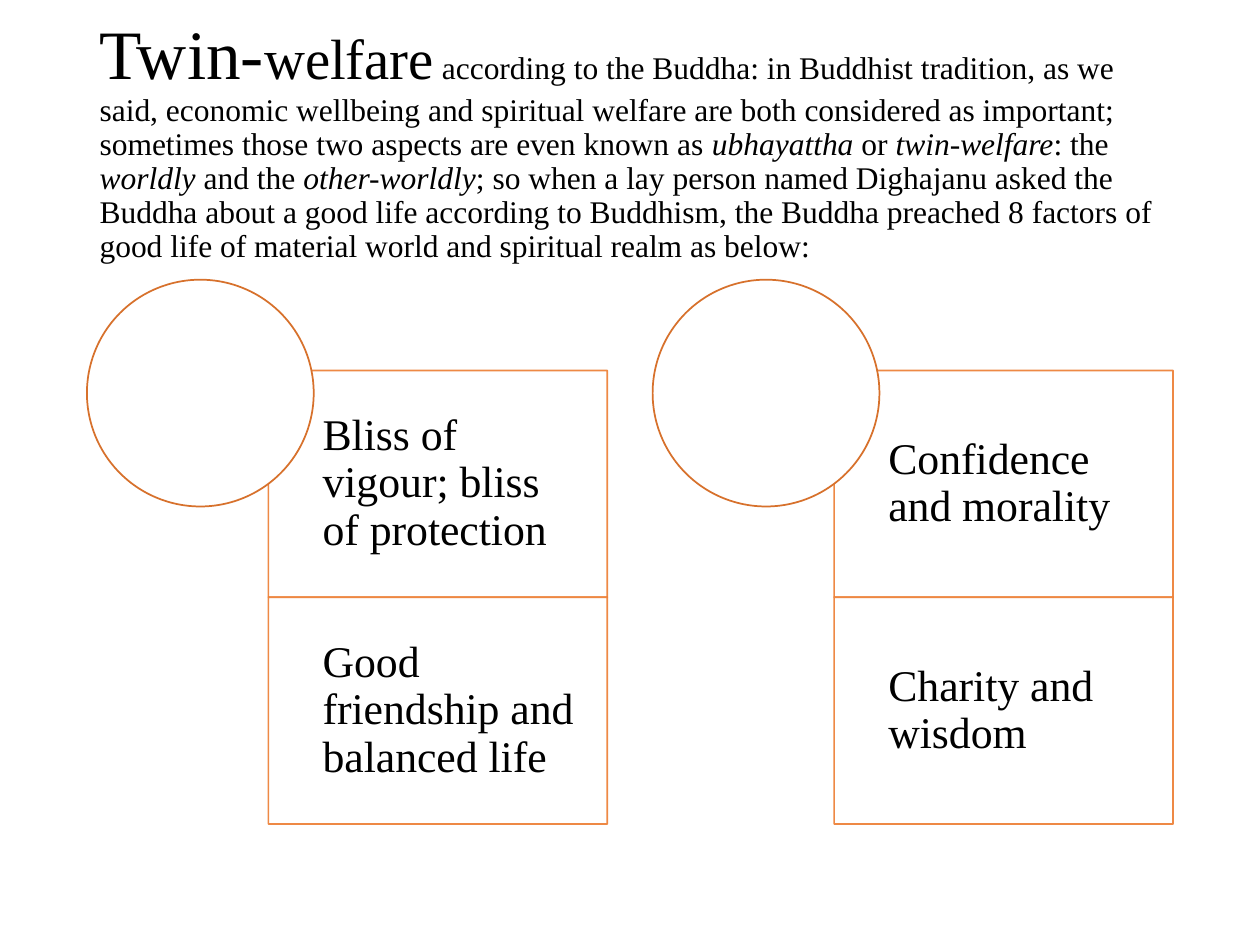
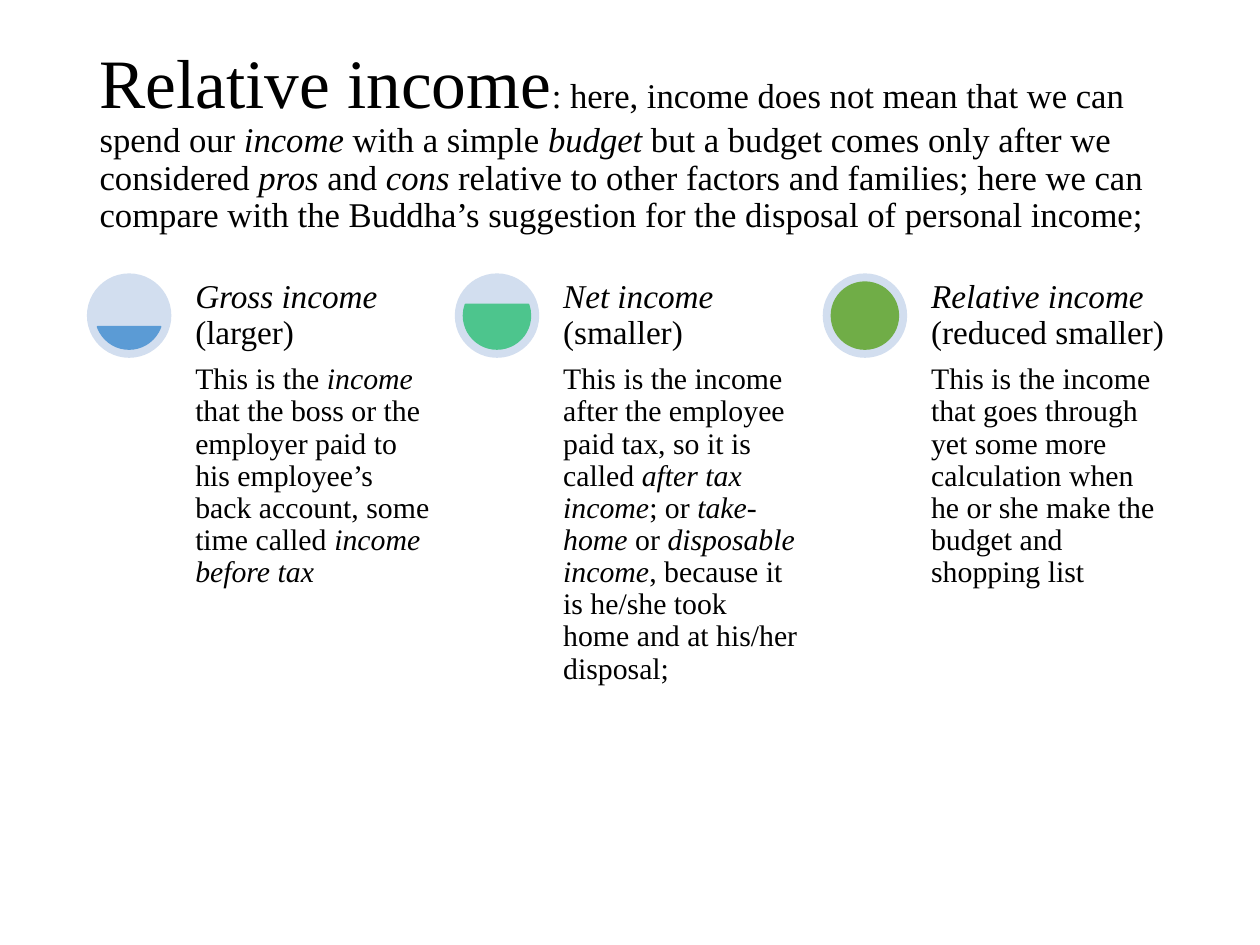
import pptx
import pptx.util
import pptx.dml.color
import pptx.enum.shapes
import pptx.enum.text
import pptx.oxml
import pptx.oxml.ns

Inches, Pt = pptx.util.Inches, pptx.util.Pt
SHAPE = pptx.enum.shapes.MSO_SHAPE
ANCHOR = pptx.enum.text.MSO_ANCHOR

FONT = "Times New Roman"
COLORS = {
    "text": "000000", "panel": "FFFFFF", "panel_line": "ED7D31",
    "circle_line": "D7712C", "dial": "D2DEEF",
    "gross": "5B9BD5", "net": "4DC58D", "relative": "70AD47",
}
LEFT = 0.69

# Slide 1: two columns, each with two stacked panels
WELFARE = [
    ["Bliss of vigour; bliss of protection", "Good friendship and balanced life"],
    ["Confidence and morality", "Charity and wisdom"],
]

# Slide 2: colour, chord angles in degrees, heading, body
INCOMES = [
    ("gross", (19.47, 160.53), "*Gross income *(larger)",
     "This is the *income* that the boss or the employer paid to his "
     "employee’s back account, some time called *income before tax*"),
    ("net", (340.53, 199.47), "*Net income *(smaller)",
     "This is the income after the employee paid tax, so it is called "
     "*after tax income*; or *take-home* or *disposable income*, because it "
     "is he/she took home and at his/her disposal;"),
    ("relative", (270, 270), "*Relative income *(reduced smaller)",
     "This is the income that goes through yet some more calculation when he "
     "or she make the budget and shopping list"),
]


def rgb(name):
    return pptx.dml.color.RGBColor.from_string(COLORS[name])


def add_text(tf, text, size, anchor=ANCHOR.TOP, insets=(0.1, 0.05, 0.1, 0.05)):
    """Append text to the first paragraph; *stars* enclose italics."""
    tf.word_wrap = True
    tf.auto_size = pptx.enum.text.MSO_AUTO_SIZE.NONE
    tf.vertical_anchor = anchor
    tf.margin_left, tf.margin_top, tf.margin_right, tf.margin_bottom = map(Inches, insets)
    p = tf.paragraphs[0]
    p.alignment = pptx.enum.text.PP_ALIGN.LEFT
    p.line_spacing = 0.9
    for i, part in enumerate(text.split("*")):
        if part:
            r = p.add_run()
            r.text = part
            r.font.name, r.font.size = FONT, Pt(size)
            r.font.italic = i % 2 == 1
            r.font.color.rgb = rgb("text")


def add_shape(s, kind, box, fill, line=None):
    sp = s.shapes.add_shape(kind, *map(Inches, box))
    sp.shadow.inherit = False
    sp.fill.solid()
    sp.fill.fore_color.rgb = rgb(fill)
    if line:
        sp.line.color.rgb = rgb(line)
        sp.line.width = Pt(1)
    else:
        sp.line.fill.background()
    return sp


def set_opacity(sp, percent):
    """Apply the opacity to both fill and line."""
    for clr in sp.fill._xPr.iter(pptx.oxml.ns.qn("a:srgbClr")):
        alpha = pptx.oxml.parse_xml(
            f'<a:alpha {pptx.oxml.ns.nsdecls("a")} val="{percent * 1000}"/>')
        clr.append(alpha)


def add_textbox(s, box, text, size, anchor=ANCHOR.TOP):
    tb = s.shapes.add_textbox(*map(Inches, box))
    add_text(tb.text_frame, text, size, anchor, insets=(0.05,) * 4)


def add_titled_slide(prs, parts):
    """Add a slide whose title is made of (text, size) parts."""
    s = prs.slides.add_slide(prs.slide_layouts[5])
    title = s.shapes.title
    title.left, title.top, title.width, title.height = map(Inches, (LEFT, 0.4, 8.62, 1.45))
    for text, size in parts:
        add_text(title.text_frame, text, size, ANCHOR.MIDDLE)
    return s


def add_welfare_column(s, x, labels):
    height = 1.8
    for row, label in enumerate(labels):
        box = (x + 1.44, 2.94 + row * height, 2.69, height)
        sp = add_shape(s, SHAPE.RECTANGLE, box, "panel", "panel_line")
        set_opacity(sp, 90)
        add_text(sp.text_frame, label, 25, ANCHOR.MIDDLE, (0.43, 0.19, 0.19, 0.19))
    add_shape(s, SHAPE.OVAL, (x, 2.22, 1.8, 1.8), "panel", "circle_line")


def add_income_column(s, x, color, angles, heading, body):
    top, dial, rim = 2.17, 0.67, 0.07
    add_shape(s, SHAPE.OVAL, (x, top, dial, dial), "dial")
    level = dial - 2 * rim
    sp = add_shape(s, SHAPE.CHORD, (x + rim, top + rim, level, level), color, color)
    for i, angle in enumerate(angles):
        sp.adjustments[i] = angle * 0.6  # 60000 units a degree, scaled by 100000
    text_x, width = x + 0.81, 1.97
    add_textbox(s, (text_x, top + dial, width, 2.81), body, 17)
    add_textbox(s, (text_x, top, width, dial), heading, 19, ANCHOR.BOTTOM)


def main():
    prs = pptx.Presentation()
    prs.slide_width, prs.slide_height = Inches(10), Inches(7.5)

    # Twin-welfare
    s = add_titled_slide(prs, [
        ("Twin-", 39.6), ("welfare", 32.4),
        (" according to the Buddha: in Buddhist tradition, as we said, economic "
         "wellbeing and spiritual welfare are both considered as important; "
         "sometimes those two aspects are even known as *ubhayattha* or "
         "*twin-welfare*: the *worldly* and the *other-worldly*; so when a lay "
         "person named Dighajanu asked the Buddha about a good life according to "
         "Buddhism, the Buddha preached 8 factors of good life of material world "
         "and spiritual realm as below:", 18)])
    for col, labels in enumerate(WELFARE):
        add_welfare_column(s, LEFT + col * 4.49, labels)

    # Relative income
    s = add_titled_slide(prs, [
        ("Relative income", 39.6),
        (": here, income does not mean that we can spend our *income* with a "
         "simple *budget* but a budget comes only after we considered *pros* and "
         "*cons* relative to other factors and families; here we can compare with "
         "the Buddha’s suggestion for the disposal of personal income;", 19.8)])
    for col, income in enumerate(INCOMES):
        add_income_column(s, LEFT + col * 2.92, *income)

    prs.save("out.pptx")


if __name__ == "__main__":
    main()
